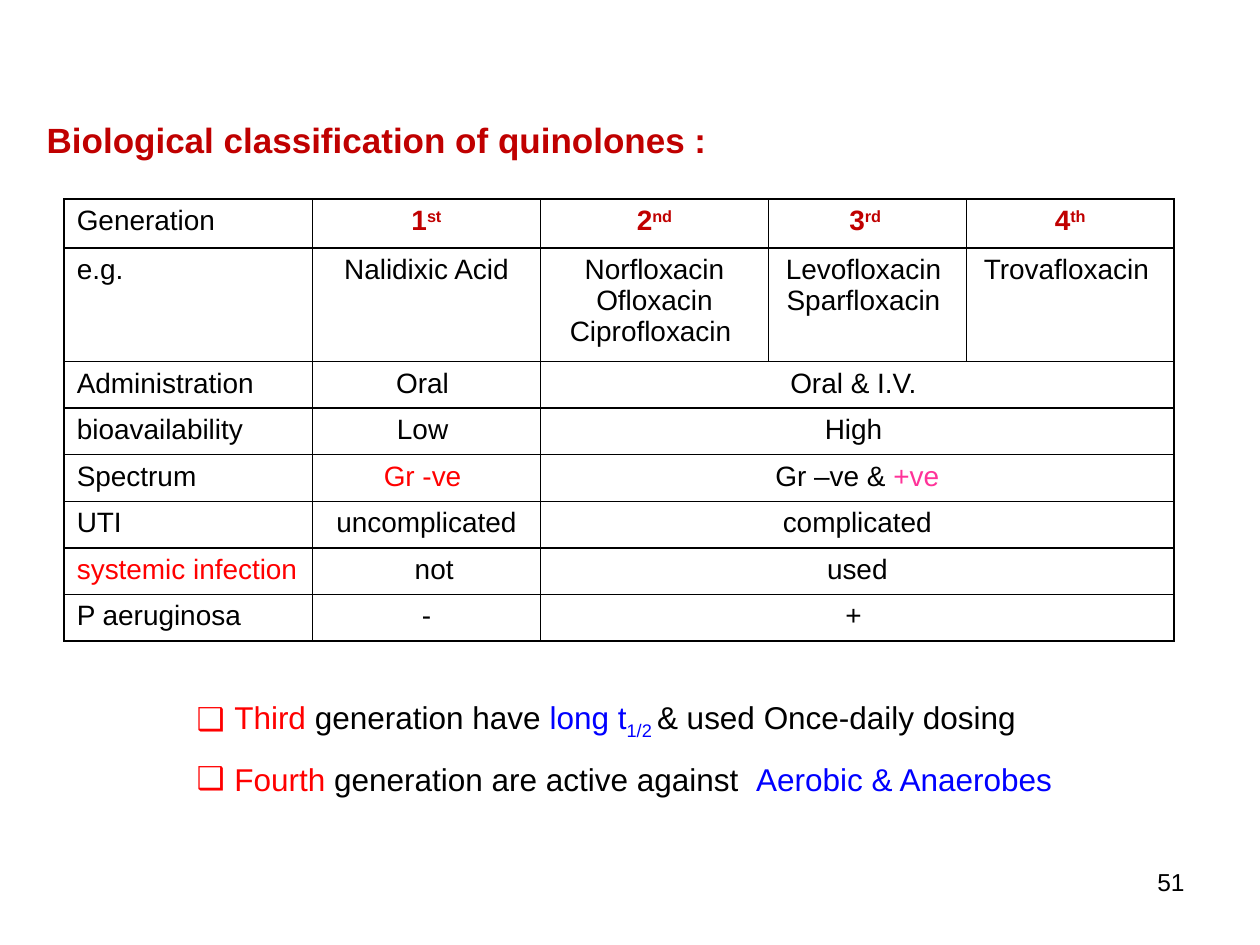
from typing import NamedTuple

import pptx
import pptx.dml.color
import pptx.enum.text
import pptx.oxml
import pptx.oxml.ns
import pptx.util

Inches = pptx.util.Inches
Pt = pptx.util.Pt
RGBColor = pptx.dml.color.RGBColor
Align = pptx.enum.text.PP_ALIGN

BLACK = RGBColor(0x00, 0x00, 0x00)
WHITE = RGBColor(0xFF, 0xFF, 0xFF)
DARK_RED = RGBColor(0xC0, 0x00, 0x00)
RED = RGBColor(0xFF, 0x00, 0x00)
PINK = RGBColor(0xFF, 0x33, 0x99)
BLUE = RGBColor(0x00, 0x00, 0xFF)
FONT = "Arial"
DRAWING_NS = pptx.oxml.ns.nsdecls("a")


class Run(NamedTuple):
    text: str
    color: RGBColor = BLACK
    bold: bool = False
    baseline: int = 0  # percent; positive is superscript


class Row(NamedTuple):
    label: Run
    first: Run
    later: list[Run]  # shared by generations 2 to 4


def add_runs(paragraph, runs: list[Run], size: int) -> None:
    for item in runs:
        run = paragraph.add_run()
        run.text = item.text
        run.font.name = FONT
        run.font.size = Pt(size)
        run.font.bold = item.bold
        run.font.color.rgb = item.color
        if item.baseline:
            run.font._element.set("baseline", str(item.baseline * 1000))


def fill_frame(frame, paragraphs: list[list[Run]], size: int, align=Align.LEFT) -> None:
    for index, runs in enumerate(paragraphs):
        paragraph = frame.paragraphs[0] if index == 0 else frame.add_paragraph()
        paragraph.alignment = align
        add_runs(paragraph, runs, size)


def place(shape, left: float, top: float, width: float, height: float) -> None:
    """Move a placeholder and give it a plain white box that fits its text."""
    shape.left, shape.top = Inches(left), Inches(top)
    shape.width, shape.height = Inches(width), Inches(height)
    shape.fill.solid()
    shape.fill.fore_color.rgb = WHITE
    shape.line.color.rgb = WHITE
    shape.line.width = Pt(0.75)
    frame = shape.text_frame
    frame.word_wrap = False
    frame.auto_size = pptx.enum.text.MSO_AUTO_SIZE.SHAPE_TO_FIT_TEXT
    frame.vertical_anchor = pptx.enum.text.MSO_ANCHOR.TOP


def set_bullet(paragraph, symbol: str, indent: float) -> None:
    properties = paragraph._p.get_or_add_pPr()
    properties.set("marL", str(Inches(indent)))
    properties.set("indent", str(-Inches(indent)))
    properties.append(pptx.oxml.parse_xml(f'<a:buChar {DRAWING_NS} char="{symbol}"/>'))


def style_cell(cell) -> None:
    """White fill and a thin black border on every side."""
    cell.fill.solid()
    cell.fill.fore_color.rgb = WHITE
    properties = cell._tc.get_or_add_tcPr()
    for index, side in enumerate(("lnL", "lnR", "lnT", "lnB")):
        properties.insert(index, pptx.oxml.parse_xml(
            f'<a:{side} {DRAWING_NS} w="{Pt(1)}"><a:solidFill>'
            f'<a:srgbClr val="{BLACK}"/></a:solidFill></a:{side}>'))


def ordinal(number: str, suffix: str) -> list[list[Run]]:
    return [[Run(number, DARK_RED, True), Run(suffix, DARK_RED, True, 30)]]


# Table content: each cell is a list of paragraphs
GENERATIONS = [[[Run("Generation")]], ordinal("1", "st"), ordinal("2", "nd"),
               ordinal("3", "rd "), ordinal("4", "th")]
EXAMPLES = [
    [[Run("e.g.")]],
    [[Run(" Nalidixic Acid ")]],
    [[Run(" Norfloxacin ")], [Run("Ofloxacin Ciprofloxacin ")]],
    [[Run("Levofloxacin ")], [Run("Sparfloxacin ")]],
    [[Run("Trovafloxacin ")]],
]
PROPERTIES = [
    Row(Run("Administration"), Run("Oral "), [Run("Oral & I.V. ")]),
    Row(Run("bioavailability"), Run("Low "), [Run("High ")]),
    Row(Run("Spectrum"), Run("Gr -ve ", RED), [Run("Gr –ve & "), Run("+ve", PINK)]),
    Row(Run("UTI"), Run(" uncomplicated "), [Run(" complicated ")]),
    Row(Run("systemic infection", RED), Run("  not"), [Run("used")]),
    Row(Run("P aeruginosa"), Run("-"), [Run("+ ")]),
]
COLUMN_WIDTHS = [1.97, 1.81, 1.81, 1.57, 1.65]
ROW_HEIGHTS = [0.39, 0.9] + [0.37] * len(PROPERTIES)

REMARKS = [
    [Run("Third", RED), Run(" generation have "), Run("long t", BLUE),
     Run("1/2 ", BLUE, baseline=-25), Run("& used Once-daily dosing")],
    [Run("Fourth", RED), Run(" generation are active against  "),
     Run("Aerobic & Anaerobes", BLUE)],
]


def add_classification(slide) -> None:
    table = slide.shapes.add_table(
        len(ROW_HEIGHTS), len(COLUMN_WIDTHS), Inches(0.51), Inches(1.58),
        Inches(sum(COLUMN_WIDTHS)), Inches(sum(ROW_HEIGHTS))).table
    table.first_row = table.horz_banding = False
    for column, width in zip(table.columns, COLUMN_WIDTHS):
        column.width = Inches(width)
    for row, height in zip(table.rows, ROW_HEIGHTS):
        row.height = Inches(height)
    for cell in table.iter_cells():
        style_cell(cell)

    contents = [GENERATIONS, EXAMPLES]
    contents += [[[[row.label]], [[row.first]], [row.later]] for row in PROPERTIES]
    for row_index, cells in enumerate(contents):
        if len(cells) < len(COLUMN_WIDTHS):
            table.cell(row_index, 2).merge(table.cell(row_index, 4))
        for column_index, paragraphs in enumerate(cells):
            align = Align.CENTER if column_index else Align.LEFT
            fill_frame(table.cell(row_index, column_index).text_frame,
                       paragraphs, 16, align)


def main() -> None:
    presentation = pptx.Presentation()
    presentation.slide_width = Inches(10)
    presentation.slide_height = Inches(7.5)
    slide = presentation.slides.add_slide(presentation.slide_layouts[1])

    # Title
    title = slide.shapes.title
    place(title, 0.27, 0.89, 5.48, 0.44)
    heading = Run("Biological classification of quinolones :", DARK_RED, True)
    fill_frame(title.text_frame, [[heading]], 20)

    # Table of generations
    add_classification(slide)

    # Remarks under the table
    remarks = slide.placeholders[1]
    place(remarks, 1.46, 5.32, 7.04, 1.01)
    fill_frame(remarks.text_frame, REMARKS, 18)
    for paragraph in remarks.text_frame.paragraphs:
        paragraph.line_spacing = 1.5
        paragraph.space_before = Pt(0)
        set_bullet(paragraph, "❑", 0.3)

    # Page number
    page_number = slide.shapes.add_textbox(
        Inches(7.17), Inches(6.83), Inches(2.33), Inches(0.52))
    page_number.text_frame.word_wrap = True
    fill_frame(page_number.text_frame, [[Run("51")]], 14, Align.RIGHT)

    presentation.save("out.pptx")


if __name__ == "__main__":
    main()
